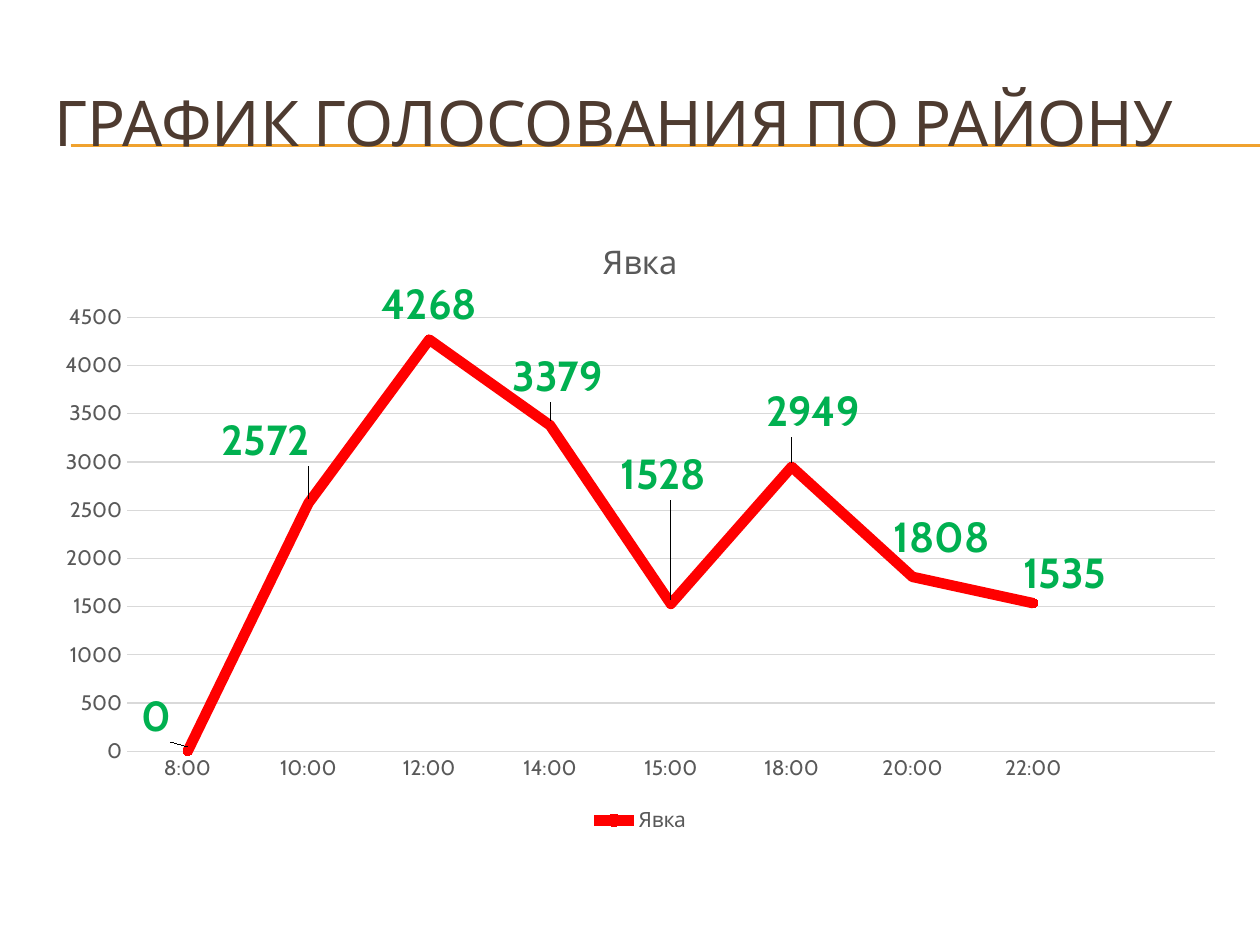
import dataclasses

import pptx
import pptx.chart.data
import pptx.dml.color
import pptx.enum.chart
import pptx.enum.shapes
import pptx.enum.text
import pptx.oxml
import pptx.oxml.ns
import pptx.util
from pptx.util import Inches


@dataclasses.dataclass(frozen=True)
class Theme:
    """Colours, font and type sizes of the slide."""
    font: str = "Cabin"
    heading: str = "4E3B30"
    accent: str = "F0A22E"
    muted: str = "595959"
    grid: str = "D9D9D9"
    turnout: str = "FF0000"
    value: str = "00B050"
    heading_size: float = 36
    chart_title_size: float = 18.6
    axis_size: float = 12
    value_size: float = 24


THEME = Theme()
CHART_WIDTH, CHART_HEIGHT = 9.5, 4.95
TURNOUT = {
    "8:00": 0, "10:00": 2572, "12:00": 4268, "14:00": 3379, "15:00": 1528,
    "18:00": 2949, "20:00": 1808, "22:00": 1535, "": None,
}
LABEL_SHIFTS = {
    0: (-0.25, 0), 1: (-0.34, -0.22), 3: (0.06, -0.11), 4: (-0.06, -0.75),
    5: (0.17, -0.16), 6: (0.23, -0.04), 7: (0.25, 0.04),
}


def rgb(colour):
    """Return a colour object for a hex string."""
    return pptx.dml.color.RGBColor.from_string(colour)


def style_font(font, size, colour, bold=False):
    """Apply the theme font with a size, colour and weight."""
    font.name = THEME.font
    font.size = pptx.util.Pt(size)
    font.bold = bold
    font.color.rgb = rgb(colour)


def style_line(line, colour, width=0.75):
    """Give a line its colour and width in points."""
    line.color.rgb = rgb(colour)
    line.width = pptx.util.Pt(width)


def write_text(frame, text, size, colour, bold=False,
               align=pptx.enum.text.PP_ALIGN.LEFT):
    """Write one formatted paragraph into a text frame."""
    paragraph = frame.paragraphs[0]
    paragraph.alignment = align
    run = paragraph.add_run()
    run.text = text
    style_font(run.font, size, colour, bold)


def add_rule(slide, y):
    """Draw a horizontal accent rule that runs to the right edge."""
    rule = slide.shapes.add_connector(
        pptx.enum.shapes.MSO_CONNECTOR.STRAIGHT,
        Inches(0.56), Inches(y), Inches(10), Inches(y))
    style_line(rule.line, THEME.accent)
    properties = rule._element.spPr
    properties.append(pptx.oxml.parse_xml(
        f"<a:effectLst {pptx.oxml.ns.nsdecls('a')}/>"))


def add_heading(slide, text):
    """Place the title in front of the rules."""
    heading = slide.shapes.title
    heading.left, heading.top = Inches(0.33), Inches(0.5)
    heading.width, heading.height = Inches(9.5), Inches(0.92)
    heading.text_frame.word_wrap = True
    heading.text_frame.vertical_anchor = pptx.enum.text.MSO_ANCHOR.MIDDLE
    write_text(heading.text_frame, text, THEME.heading_size, THEME.heading)
    slide.shapes._spTree.append(heading._element)


def style_axis(axis):
    """Remove tick marks and set the type of an axis."""
    axis.major_tick_mark = pptx.enum.chart.XL_TICK_MARK.NONE
    axis.minor_tick_mark = pptx.enum.chart.XL_TICK_MARK.NONE
    style_font(axis.tick_labels.font, THEME.axis_size, THEME.muted)


def shift_label(point, dx, dy):
    """Move a value label by a distance in inches from its place above."""
    label = point.data_label
    style_font(label.font, THEME.value_size, THEME.value, bold=True)
    label.position = pptx.enum.chart.XL_LABEL_POSITION.ABOVE
    layout = pptx.oxml.parse_xml(
        f"<c:layout {pptx.oxml.ns.nsdecls('c')}><c:manualLayout>"
        f'<c:x val="{dx / CHART_WIDTH}"/><c:y val="{dy / CHART_HEIGHT}"/>'
        "</c:manualLayout></c:layout>")
    label._dLbl.find(pptx.oxml.ns.qn("c:idx")).addnext(layout)


def style_series(series):
    """Format the turnout line, its markers and its value labels."""
    series.smooth = False
    style_line(series.format.line, THEME.turnout, 6)
    series.marker.style = pptx.enum.chart.XL_MARKER_STYLE.CIRCLE
    series.marker.size = 5
    series.marker.format.fill.solid()
    series.marker.format.fill.fore_color.rgb = rgb(THEME.accent)
    labels = series.data_labels
    labels.show_value = True
    labels.number_format, labels.number_format_is_linked = "0", False
    labels.position = pptx.enum.chart.XL_LABEL_POSITION.ABOVE
    style_font(labels.font, THEME.value_size, THEME.value, bold=True)
    for index, shift in LABEL_SHIFTS.items():
        shift_label(series.points[index], *shift)


def add_turnout_chart(slide, name):
    """Add the line chart of turnout by hour."""
    data = pptx.chart.data.CategoryChartData()
    data.categories = list(TURNOUT)
    data.add_series(name, list(TURNOUT.values()))
    chart = slide.shapes.add_chart(
        pptx.enum.chart.XL_CHART_TYPE.LINE_MARKERS, Inches(0.33), Inches(1.7),
        Inches(CHART_WIDTH), Inches(CHART_HEIGHT), data).chart
    style_font(chart.font, 10, "000000")
    chart.has_title = True
    write_text(chart.chart_title.text_frame, name, THEME.chart_title_size,
               THEME.muted, align=pptx.enum.text.PP_ALIGN.CENTER)
    chart.chart_title.include_in_layout = False
    chart.has_legend = True
    chart.legend.position = pptx.enum.chart.XL_LEGEND_POSITION.BOTTOM
    chart.legend.include_in_layout = False
    style_font(chart.legend.font, THEME.axis_size, THEME.muted)
    style_axis(chart.category_axis)
    style_line(chart.category_axis.format.line, THEME.grid)
    style_axis(chart.value_axis)
    chart.value_axis.format.line.fill.background()
    chart.value_axis.minimum_scale = 0
    chart.value_axis.maximum_scale = 4500
    chart.value_axis.major_unit = 500
    style_line(chart.value_axis.major_gridlines.format.line, THEME.grid)
    chart.plots[0].vary_by_categories = False
    style_series(chart.plots[0].series[0])


def main():
    """Build and save the slide."""
    deck = pptx.Presentation()
    deck.slide_width, deck.slide_height = Inches(10), Inches(7.5)
    slide = deck.slides.add_slide(deck.slide_layouts.get_by_name("Title Only"))
    for y in (1.15, 1.16):
        add_rule(slide, y)
    add_heading(slide, "ГРАФИК ГОЛОСОВАНИЯ ПО РАЙОНУ")
    add_turnout_chart(slide, "Явка")
    deck.save("out.pptx")


if __name__ == "__main__":
    main()
